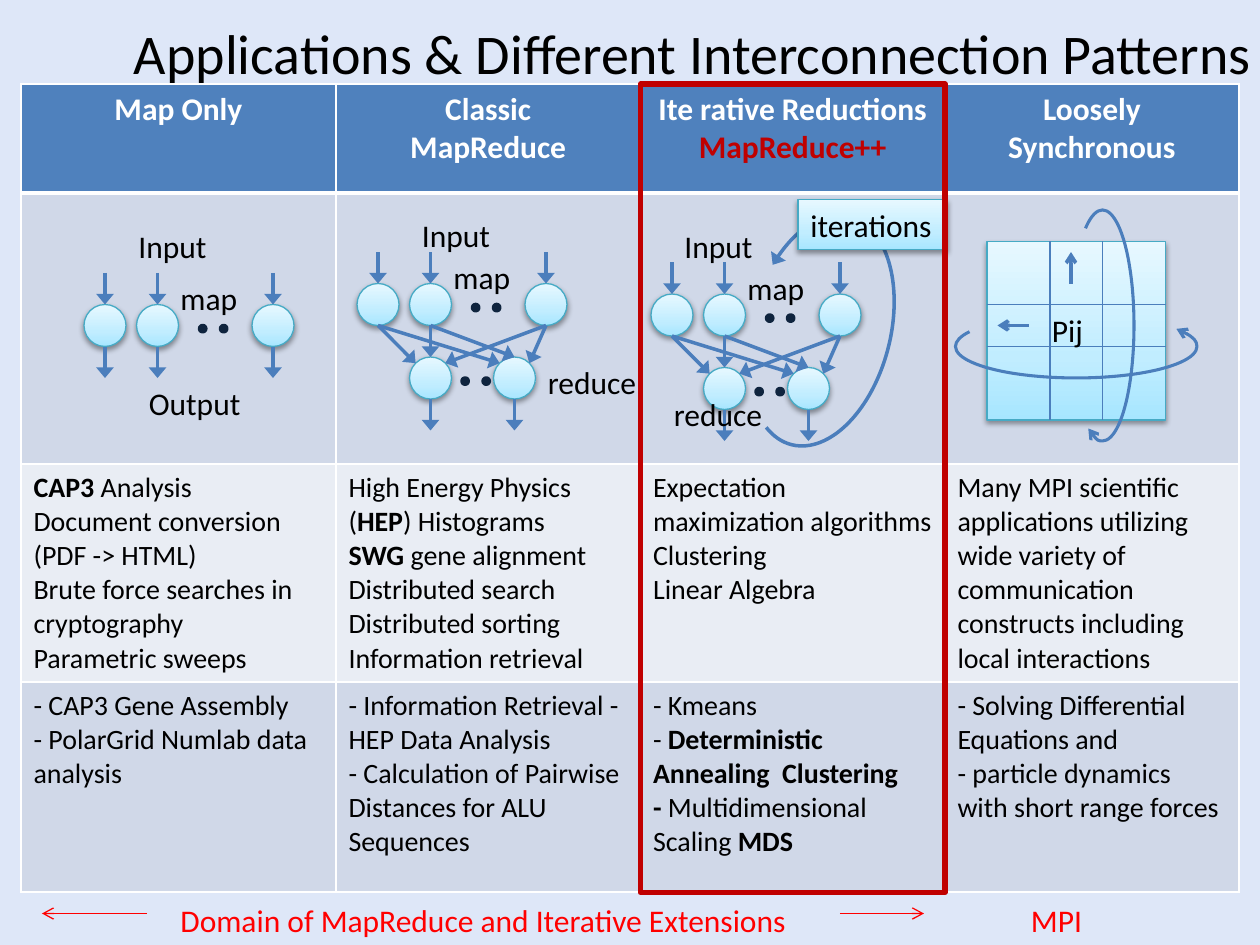
"""Build a slide comparing four application patterns from map-only to loosely synchronous."""
from copy import deepcopy
from dataclasses import dataclass
from math import sqrt

from pptx import Presentation
from pptx.dml.color import RGBColor
from pptx.enum.shapes import MSO_CONNECTOR, MSO_SHAPE
from pptx.enum.text import MSO_ANCHOR, MSO_AUTO_SIZE, PP_ALIGN
from pptx.oxml.ns import qn
from pptx.oxml.xmlchemy import OxmlElement
from pptx.util import Inches, Pt


@dataclass(frozen=True)
class Theme:
    font: str = "Calibri"
    title_size: int = 32
    label_size: int = 18
    body_size: int = 16
    background: str = "DEE7F8"
    ink: str = "000000"
    white: str = "FFFFFF"
    arrow: str = "4B7EBC"
    edge: str = "46AAC5"
    dot: str = "0F243E"
    accent: str = "C00000"
    domain: str = "FF0000"
    header: str = "4F81BD"
    bands: tuple = ("D0D8E8", "E9EDF4", "D0D8E8")
    glow: tuple = ((0, "A7E6FF"), (0.35, "C1EDFF"), (1, "E7F8FF"))


THEME = Theme()
UNITS_PER_INCH = 12
TITLE = "Applications & Different Interconnection Patterns"
COLUMNS = (30, 29, 29, 28)
ROWS = (10.4, 25.8, 19.2, 20)
HEADERS = (
    ["Map Only"],
    ["Classic", "MapReduce"],
    ["Ite rative Reductions **MapReduce++**"],
    ["Loosely Synchronous"],
)
USES = (
    ["**CAP3** Analysis", "Document conversion (PDF -> HTML)",
     "Brute force searches in cryptography", "Parametric sweeps"],
    ["High Energy Physics (**HEP**) Histograms", "**SWG** gene alignment",
     "Distributed search", "Distributed sorting", "Information retrieval"],
    ["Expectation maximization algorithms", "Clustering", "Linear Algebra"],
    ["Many MPI scientific applications utilizing wide variety of communication "
     "constructs including local interactions"],
)
EXAMPLES = (
    ["- CAP3 Gene Assembly", "- PolarGrid Numlab data analysis"],
    ["- Information Retrieval - HEP Data Analysis",
     "- Calculation of Pairwise Distances for ALU Sequences"],
    [" Kmeans", " **Deterministic Annealing  Clustering**",
     "**- **Multidimensional Scaling **MDS**"],
    ["- Solving Differential Equations and",
     "- particle dynamics with short range forces"],
)
CONTENT = (HEADERS, [[]] * 4, USES, EXAMPLES)
MAP_ONLY = ((8, 29), {"Input": (4, -8, 9), "map": (8, -3, 8), "Output": (5, 7, 11.3)})
CLASSIC = ((34, 27), {"Input": (5, -7, 9), "map": (8, -3, 8), "reduce": (17, 7, 11)})
ITERATIVE = ((62, 28), {"Input": (2, -7, 9), "map": (8, -3, 8), "reduce": (1, 9, 11)})
MAPPERS = (0, 5, 16)
REDUCERS = (5, 13)
NODE = 4
REDUCE_ROW = 7
LABEL_HEIGHT = 4.8
LOOP_SWEEP = (131.85, 63.04)
MESH_SWEEP = (103.27, 5.98)
FOOTER = {"Domain of MapReduce and Iterative Extensions": (16, 60.8), "MPI": (97, 7.3)}


def grid(*units):
    return [Inches(unit / UNITS_PER_INCH) for unit in units]


def rgb(code):
    return RGBColor.from_string(code)


def element(tag, parent=None, **attributes):
    node = OxmlElement(tag)
    for key, value in attributes.items():
        node.set(key, str(value))
    if parent is not None:
        parent.append(node)
    return node


def style_font(font, size, color=THEME.ink, bold=False):
    font.name, font.size, font.bold = THEME.font, Pt(size), bold
    font.color.rgb = rgb(color)


def add_outline(shape, color, width, head=None, tail=None):
    shape.line.color.rgb = rgb(color)
    shape.line.width = Pt(width)
    for tag, kind in (("a:headEnd", head), ("a:tailEnd", tail)):
        if kind:
            element(tag, shape.line._get_or_add_ln(), type=kind,
                    w="lg" if kind == "triangle" else "med")


def add_line(shapes, start, end, tail="triangle", color=THEME.arrow, width=2):
    line = shapes.add_connector(MSO_CONNECTOR.STRAIGHT, *grid(*start, *end))
    add_outline(line, color, width, tail=tail)
    element("a:effectLst", line._element.spPr)


def add_shape(shapes, kind, box, color, width, fill=None, **ends):
    shape = shapes.add_shape(kind, *grid(*box))
    shape.shadow.inherit = False
    if fill:
        shape.fill.solid()
        shape.fill.fore_color.rgb = rgb(fill)
    else:
        shape.fill.background()
    add_outline(shape, color, width, **ends)
    return shape


def add_glossy(shapes, kind, box):
    shape = add_shape(shapes, kind, box, THEME.edge, 0.75)
    shape.fill.gradient()
    shape.fill.gradient_angle = 90
    stops = shape._element.spPr.find(qn("a:gradFill")).find(qn("a:gsLst"))
    stops.insert(1, deepcopy(stops[0]))
    for stop, (position, color) in zip(shape.fill.gradient_stops, THEME.glow):
        stop.position = position
        stop.color.rgb = rgb(color)
    effects = shape._element.spPr.find(qn("a:effectLst"))
    shadow = element("a:outerShdw", effects, blurRad=Pt(3.1), dist=Pt(1.6),
                     dir=5400000, rotWithShape=0)
    shade = element("a:srgbClr", shadow, val=THEME.ink)
    element("a:alpha", shade, val=38000)
    return shape


def add_arc(shapes, box, sweep, width, rotation=0, flip=False, **ends):
    arc = add_shape(shapes, MSO_SHAPE.ARC, box, THEME.arrow, width, **ends)
    arc.adjustments[0], arc.adjustments[1] = sweep
    arc.rotation = rotation
    if flip:
        arc._element.spPr.get_or_add_xfrm().set("flipV", "1")


def write_label(shape, words, color=THEME.ink):
    frame = shape.text_frame
    frame.text = words
    frame.word_wrap = False
    frame.auto_size = MSO_AUTO_SIZE.SHAPE_TO_FIT_TEXT
    frame.vertical_anchor = MSO_ANCHOR.TOP
    frame.paragraphs[0].alignment = PP_ALIGN.LEFT
    style_font(frame.paragraphs[0].runs[0].font, THEME.label_size, color)


def add_label(shapes, words, left, top, width, color=THEME.ink):
    write_label(shapes.add_textbox(*grid(left, top, width, LABEL_HEIGHT)), words, color)


def write_cell(cell, lines, header):
    for index, line in enumerate(lines):
        frame = cell.text_frame
        paragraph = frame.add_paragraph() if index else frame.paragraphs[0]
        if header:
            paragraph.alignment = PP_ALIGN.CENTER
        if line.startswith(" "):
            properties = paragraph._p.get_or_add_pPr()
            element("a:buFont", properties, typeface=THEME.font)
            element("a:buChar", properties, char="-")
        for part, words in enumerate(line.split("**")):
            if words:
                run = paragraph.add_run()
                run.text = words
                strong = part % 2 == 1
                if header:
                    style_font(run.font, THEME.label_size,
                               THEME.accent if strong else THEME.white, True)
                else:
                    style_font(run.font, THEME.body_size, bold=strong)


def add_table(shapes):
    table = shapes.add_table(len(ROWS), len(COLUMNS),
                             *grid(2, 8, sum(COLUMNS), sum(ROWS))).table
    for column, width in zip(table.columns, grid(*COLUMNS)):
        column.width = width
    for r, (height, lists, fill) in enumerate(
            zip(grid(*ROWS), CONTENT, (THEME.header, *THEME.bands))):
        table.rows[r].height = height
        for c, lines in enumerate(lists):
            cell = table.cell(r, c)
            for side in "LRTB":
                thick = (r, side) in ((0, "B"), (1, "T"))
                border = element(f"a:ln{side}", cell._tc.get_or_add_tcPr(),
                                 w=Pt(3 if thick else 1))
                element("a:srgbClr", element("a:solidFill", border), val=THEME.white)
            cell.fill.solid()
            cell.fill.fore_color.rgb = rgb(fill)
            write_cell(cell, lines, r == 0)


def add_network(shapes, pattern, reducing):
    (left, top), labels = pattern
    middle = NODE / 2
    layers = [(MAPPERS, 0, (11, 13))]
    if reducing:
        layers.append((REDUCERS, REDUCE_ROW, (10, 12)))
    for nodes, row, dots in layers:
        for x in nodes:
            center, y = left + x + middle, top + row
            add_glossy(shapes, MSO_SHAPE.OVAL, (left + x, y, NODE, NODE))
            if row == 0:
                add_line(shapes, (center, y - 3), (center, y))
            if row or not reducing:
                add_line(shapes, (center, y + NODE), (center, y + NODE + 3))
        for x in dots:
            add_shape(shapes, MSO_SHAPE.OVAL, (left + x, top + row + middle, 0.6, 0.6),
                      THEME.dot, 2, THEME.dot)
    if reducing:
        corner = middle / sqrt(2)
        for x, (dx, dy) in zip(MAPPERS, ((-corner, corner), (0, middle), (corner, corner))):
            for reducer in REDUCERS:
                add_line(shapes, (left + x + middle, top + NODE),
                         (left + reducer + middle + dx, top + REDUCE_ROW + middle - dy))
    for words, (x, y, width) in labels.items():
        add_label(shapes, words, left + x, top + y, width)


def add_mesh(shapes):
    left, top, size = 94, 23, 17
    add_glossy(shapes, MSO_SHAPE.RECTANGLE, (left, top, size, size))
    for x in (100, 105):
        add_line(shapes, (x, top), (x, top + size), None, width=0.75)
    for y in (29, 33):
        add_line(shapes, (left, y), (left + size, y), None, width=0.75)
    add_label(shapes, "Pij", 99, 29, 5.4)
    add_line(shapes, (102, 27), (102, 24), "arrow")
    add_line(shapes, (98, 31), (95, 31), "arrow")
    add_arc(shapes, (91, 30, 23, 6), MESH_SWEEP, 1.75, flip=True, tail="arrow")
    add_arc(shapes, (94, 28, 22, 6), MESH_SWEEP, 1.75, 270, True, head="arrow")


def main():
    deck = Presentation()
    deck.slide_width, deck.slide_height = grid(120, 90)
    slide = deck.slides.add_slide(deck.slide_layouts[5])
    slide.background.fill.solid()
    slide.background.fill.fore_color.rgb = rgb(THEME.background)
    shapes = slide.shapes
    title = shapes.title
    title.left, title.top, title.width, title.height = grid(9, 0, 114, 10)
    title.text_frame.text = TITLE
    title.text_frame.vertical_anchor = MSO_ANCHOR.MIDDLE
    title.text_frame.paragraphs[0].alignment = PP_ALIGN.CENTER
    style_font(title.text_frame.paragraphs[0].runs[0].font, THEME.title_size)

    add_table(shapes)
    add_network(shapes.add_group_shape().shapes, MAP_ONLY, False)
    add_network(shapes.add_group_shape().shapes, CLASSIC, True)
    add_arc(shapes, (71.5, 20.3, 13.3, 22.4), LOOP_SWEEP, 2, 14.3, head="triangle")
    iterative = shapes.add_group_shape().shapes
    add_network(iterative, ITERATIVE, True)
    write_label(add_glossy(iterative, MSO_SHAPE.RECTANGLE, (76, 19, 14.2, LABEL_HEIGHT)),
                "iterations")
    add_mesh(shapes.add_group_shape().shapes)

    for words, (left, width) in FOOTER.items():
        add_label(shapes, words, left, 85.2, width, THEME.domain)
    for start, end in ((80, 88), (14, 4)):
        add_line(shapes, (start, 87), (end, 87), "arrow", THEME.domain, 0.75)
    add_shape(shapes, MSO_SHAPE.RECTANGLE, (61, 8, 29, 77), THEME.accent, 3)
    deck.save("out.pptx")


if __name__ == "__main__":
    main()
